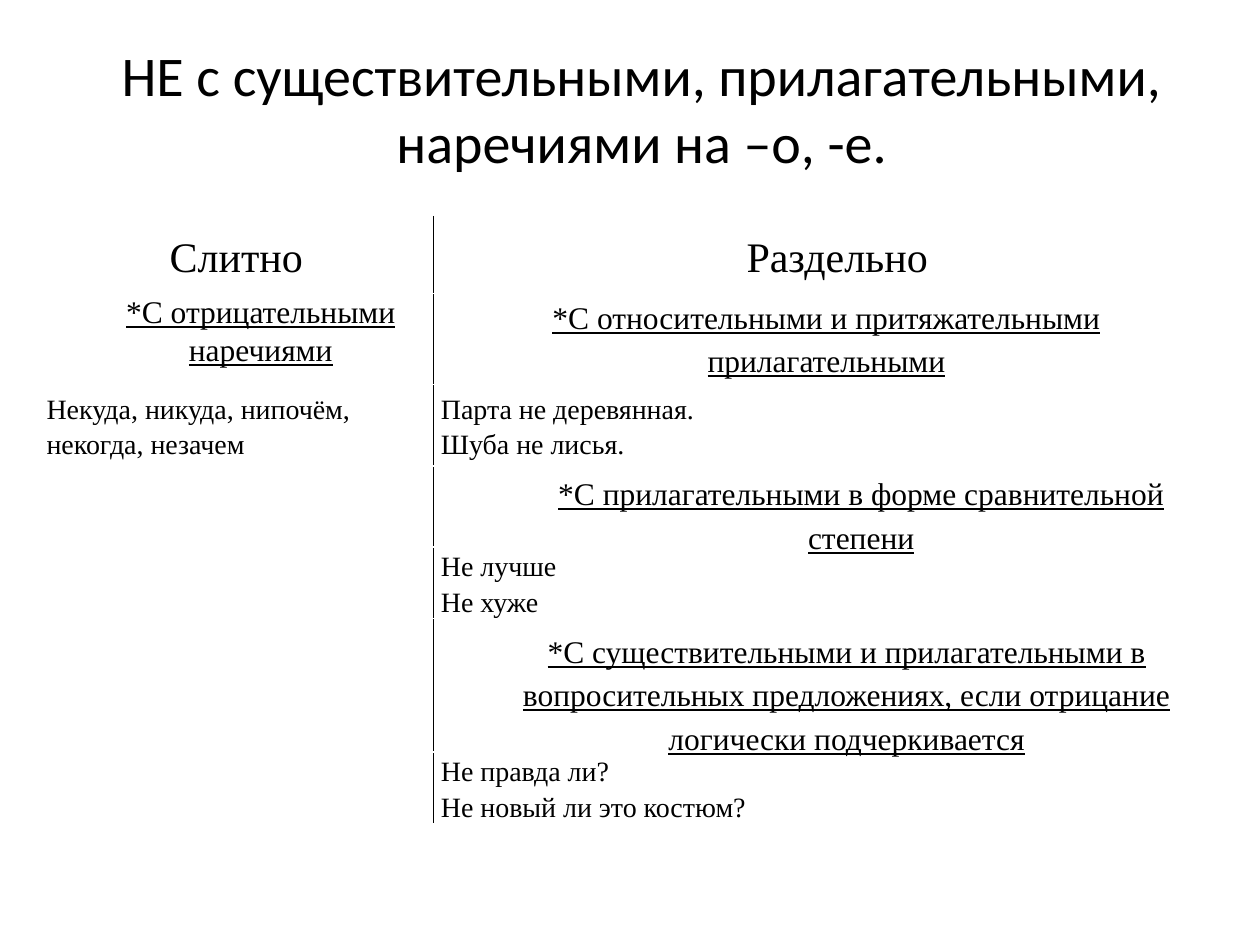
from lxml.etree import SubElement
from pptx import Presentation
from pptx.dml.color import RGBColor
from pptx.enum.text import MSO_ANCHOR as Anchor, MSO_AUTO_SIZE as AutoSize, PP_ALIGN as Align
from pptx.oxml.ns import qn
from pptx.util import Inches, Pt

BLACK = RGBColor(0, 0, 0)
SERIF = "Times New Roman"
GRID_COLUMNS, GRID_ROWS = 100, 75

TITLE = {"name": "Calibri", "size": Pt(32)}
HEADER = {"name": SERIF, "size": Pt(24)}
EXAMPLE = {"name": SERIF, "size": Pt(16)}
RULE = {"name": SERIF, "size": Pt(18), "underline": True}
CENTERED = {"alignment": Align.CENTER}
SPACED = {"line_spacing": 1.15}
CELL = {"margin_left": Inches(0.06), "margin_right": Inches(0.06),
        "margin_top": 0, "margin_bottom": 0, "vertical_anchor": Anchor.MIDDLE}


def apply(target, values):
    for name, value in values.items():
        setattr(target, name, value)


class SlideBuilder:
    def __init__(self, presentation):
        self.column = presentation.slide_width / GRID_COLUMNS
        self.row = presentation.slide_height / GRID_ROWS
        self.slide = presentation.slides.add_slide(presentation.slide_layouts[5])

    def box(self, left, top, width, height):
        return (int(left * self.column), int(top * self.row),
                int(width * self.column), int(height * self.row))

    def add_lines(self, frame, lines, font, layout):
        for index, line in enumerate(lines):
            paragraph = frame.add_paragraph() if index else frame.paragraphs[0]
            apply(paragraph, layout)
            run = paragraph.add_run()
            run.text = line
            apply(run.font, font)
            run.font.color.rgb = BLACK

    def title(self, text, *place):
        shape = self.slide.shapes.title
        apply(shape, dict(zip(("left", "top", "width", "height"), self.box(*place))))
        shape.text_frame.vertical_anchor = Anchor.MIDDLE
        self.add_lines(shape.text_frame, [text], TITLE, CENTERED)

    def rule(self, text, *place, layout):
        frame = self.slide.shapes.add_textbox(*self.box(*place)).text_frame
        apply(frame, {"word_wrap": True, "auto_size": AutoSize.SHAPE_TO_FIT_TEXT})
        self.add_lines(frame, [text], RULE, CENTERED | layout)

    def divider(self, cell, side):
        line = SubElement(cell._tc.get_or_add_tcPr(), qn(f"a:{side}"), w=str(Pt(1)))
        fill = SubElement(line, qn("a:solidFill"))
        SubElement(fill, qn("a:srgbClr"), val=str(BLACK))

    def table(self, content, widths, heights, left, top):
        place = self.box(left, top, sum(widths), sum(heights))
        table = self.slide.shapes.add_table(len(heights), len(widths), *place).table
        apply(table, {"first_row": False, "horz_banding": False})
        for column, width in zip(table.columns, widths):
            column.width = int(width * self.column)
        for row_index, height in enumerate(heights):
            table.rows[row_index].height = int(height * self.row)
            for cell, side in zip(table.rows[row_index].cells, ("lnR", "lnL")):
                apply(cell, CELL)
                self.divider(cell, side)
                cell.fill.background()
        for (row_index, column_index), lines in content.items():
            font, layout = (EXAMPLE, SPACED) if row_index else (HEADER, CENTERED | SPACED)
            self.add_lines(table.cell(row_index, column_index).text_frame, lines, font, layout)


def main():
    presentation = Presentation()
    presentation.slide_width, presentation.slide_height = Inches(10), Inches(7.5)
    builder = SlideBuilder(presentation)

    # Title
    builder.title("НЕ с существительными, прилагательными, наречиями на –о, -е.",
                  5, 1.6, 91.9, 13.9)

    # Two-column table: headers and examples, with room left for the rules
    builder.table({
        (0, 0): ["Слитно"],
        (0, 1): ["Раздельно"],
        (2, 0): ["Некуда, никуда, нипочём, некогда, незачем"],
        (2, 1): ["Парта не деревянная.", "Шуба не лисья."],
        (4, 1): ["Не лучше", "Не хуже"],
        (6, 1): ["Не правда ли?", "Не новый ли это костюм?"],
    }, widths=(31.3, 64.1), heights=(6.1, 7.2, 6.5, 6.4, 3.5, 10.6, 3.5),
        left=3.1, top=17.2)

    # Rules over the empty rows
    builder.rule("*С относительными и притяжательными прилагательными",
                 40.6, 22.7, 50, 8, layout=SPACED)
    builder.rule("*С прилагательными в форме сравнительной степени",
                 40.6, 36.7, 55.5, 8, layout=SPACED)
    builder.rule("*С существительными и прилагательными в вопросительных "
                 "предложениях, если отрицание логически подчеркивается",
                 37.5, 49.2, 59.4, 11.5, layout=SPACED)
    builder.rule("*С отрицательными наречиями", 3.2, 22.7, 35, 7.1, layout={})

    presentation.save("out.pptx")


if __name__ == "__main__":
    main()
